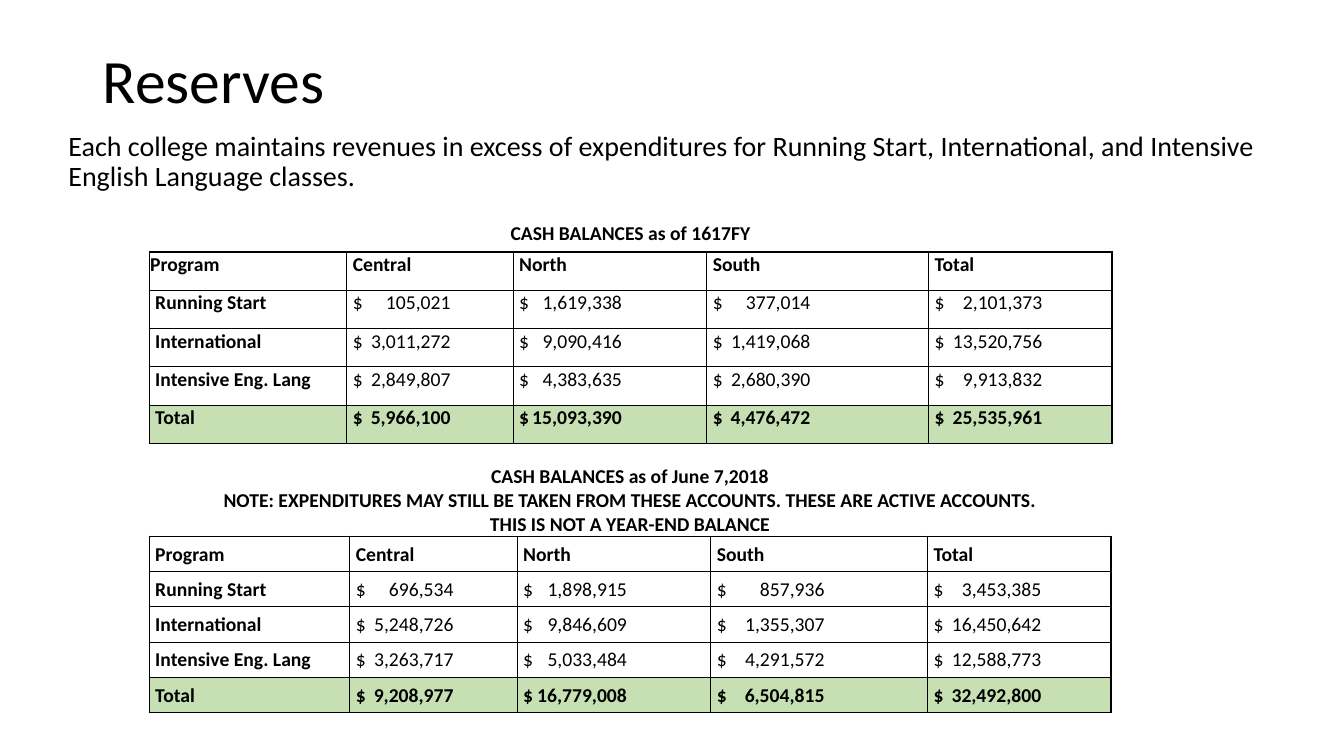
from dataclasses import dataclass

from lxml import etree
from pptx import Presentation
from pptx import util as u
from pptx.dml.color import RGBColor
from pptx.enum import text
from pptx.oxml import ns


@dataclass(frozen=True)
class Theme:
    font: str = "Calibri"
    ink: str = "000000"
    total_fill: str = "C6E0B4"
    title_size: int = 44
    body_size: int = 20
    table_size: int = 14
    border: float = 1
    cell_inset: float = 0.01
    text_inset: float = 0.06


def set_all(obj, values):
    for name, value in values.items():
        setattr(obj, name, value)


def add_xml(parent, tag, **attrs):
    return etree.SubElement(parent, ns.qn(tag), **attrs)


class ReserveSlide:
    def __init__(self, prs, theme):
        self.theme = theme
        self.slide = prs.slides.add_slide(prs.slide_layouts[5])

    def add_words(self, p, words, size, bold=False, **layout):
        r = p.add_run()
        r.text = words
        set_all(r.font, {"name": self.theme.font, "size": u.Pt(size), "bold": bold})
        r.font.color.rgb = RGBColor.from_string(self.theme.ink)
        set_all(p, layout)

    def place(self, sp, box, words, size, anchor):
        names = ("left", "top", "width", "height")
        set_all(sp, dict(zip(names, map(u.Inches, box))))
        tf = sp.text_frame
        set_all(tf, {"word_wrap": True, "vertical_anchor": anchor,
                     "auto_size": text.MSO_AUTO_SIZE.NONE})
        self.add_words(tf.paragraphs[0], words, size,
                       alignment=text.PP_ALIGN.LEFT, line_spacing=0.9)

    def title(self, words, box):
        self.place(self.slide.shapes.title, box, words, self.theme.title_size,
                   text.MSO_ANCHOR.MIDDLE)

    def body(self, words, box):
        sp = self.slide.shapes.add_textbox(0, 0, 0, 0)
        self.place(sp, box, words, self.theme.body_size, text.MSO_ANCHOR.TOP)

    def format_cell(self, cell, anchor, left, sides="LRTB", fill=None):
        """Set insets and fill, and draw borders on the named sides only."""
        inset = u.Inches(self.theme.cell_inset)
        set_all(cell, {"margin_left": u.Inches(left), "margin_right": inset,
                       "margin_top": inset, "margin_bottom": 0,
                       "vertical_anchor": anchor})
        tcPr = cell._tc.get_or_add_tcPr()
        for side in "LRTB":
            ln = add_xml(tcPr, f"a:ln{side}", w=str(u.Pt(self.theme.border)))
            if side in sides:
                add_xml(add_xml(ln, "a:solidFill"), "a:srgbClr", val=self.theme.ink)
            else:
                add_xml(ln, "a:noFill")
        if fill:
            cell.fill.solid()
            cell.fill.fore_color.rgb = RGBColor.from_string(fill)
        else:
            cell.fill.background()

    def amount(self, p, value, tab, bold):
        """Put a dollar sign at the left and the number against a right tab."""
        self.add_words(p, f"$\t{value:,}", self.theme.table_size, bold)
        tabs = add_xml(p._p.get_or_add_pPr(), "a:tabLst")
        add_xml(tabs, "a:tab", pos=str(u.Inches(tab)), algn="r")

    def balances(self, top, caption, rows, widths, tabs, caption_height, row_height,
                 anchor, corner_inset):
        th = self.theme
        heights = [caption_height] + [row_height] * (len(rows) + 1)
        table = self.slide.shapes.add_table(
            len(heights), len(widths), u.Inches(1.48), u.Inches(top),
            u.Inches(sum(widths)), u.Inches(sum(heights))).table
        set_all(table, {"first_row": False, "horz_banding": False})
        for column, width in zip(table.columns, widths):
            column.width = u.Inches(width)
        for row, height in zip(table.rows, heights):
            row.height = u.Inches(height)

        for i in range(len(widths)):
            self.format_cell(table.cell(0, i), text.MSO_ANCHOR.MIDDLE,
                             th.cell_inset, sides="B")
        heading = table.cell(0, 0)
        heading.merge(table.cell(0, len(widths) - 1))
        tf = heading.text_frame
        for i, line in enumerate(caption):
            p = tf.add_paragraph() if i else tf.paragraphs[0]
            self.add_words(p, line, th.table_size, True,
                           alignment=text.PP_ALIGN.CENTER)

        for i, record in enumerate([COLUMNS] + rows, 1):
            is_total = record[0] == "Total"
            for j, value in enumerate(record):
                cell = table.cell(i, j)
                left = corner_inset if (i, j) == (1, 0) else th.text_inset
                self.format_cell(cell, anchor, left,
                                 fill=th.total_fill if is_total else None)
                p = cell.text_frame.paragraphs[0]
                if isinstance(value, int):
                    self.amount(p, value, tabs[j - 1], is_total)
                else:
                    self.add_words(p, value, th.table_size, True)


COLUMNS = ("Program", "Central", "North", "South", "Total")
YEAR_END = [
    ("Running Start", 105021, 1619338, 377014, 2101373),
    ("International", 3011272, 9090416, 1419068, 13520756),
    ("Intensive Eng. Lang", 2849807, 4383635, 2680390, 9913832),
    ("Total", 5966100, 15093390, 4476472, 25535961),
]
JUNE = [
    ("Running Start", 696534, 1898915, 857936, 3453385),
    ("International", 5248726, 9846609, 1355307, 16450642),
    ("Intensive Eng. Lang", 3263717, 5033484, 4291572, 12588773),
    ("Total", 9208977, 16779008, 6504815, 32492800),
]


def main():
    prs = Presentation()
    set_all(prs, {"slide_width": u.Inches(13.33), "slide_height": u.Inches(7.5)})
    theme = Theme()
    page = ReserveSlide(prs, theme)
    page.title("Reserves", (0.92, 0.4, 11.5, 0.86))
    page.body("Each college maintains revenues in excess of expenditures for Running "
              "Start, International, and Intensive English Language classes.",
              (0.58, 1.26, 12.27, 4.38))
    page.balances(2.12, ["CASH BALANCES as of 1617FY"], YEAR_END,
                  widths=(1.96, 1.65, 1.92, 2.2, 1.82), tabs=(0.97, 1.02, 0.97, 1.07),
                  caption_height=0.38, row_height=0.38,
                  anchor=text.MSO_ANCHOR.TOP, corner_inset=theme.cell_inset)
    page.balances(4.6, ["CASH BALANCES as of June 7,2018",
                        "NOTE: EXPENDITURES MAY STILL BE TAKEN FROM THESE ACCOUNTS. "
                        "THESE ARE ACTIVE ACCOUNTS.",
                        "THIS IS NOT A YEAR-END BALANCE"], JUNE,
                  widths=(1.99, 1.66, 1.92, 2.15, 1.82), tabs=(0.97, 1.03, 1.07, 1.07),
                  caption_height=0.72, row_height=0.35,
                  anchor=text.MSO_ANCHOR.MIDDLE, corner_inset=theme.text_inset)
    prs.save("out.pptx")


if __name__ == "__main__":
    main()
